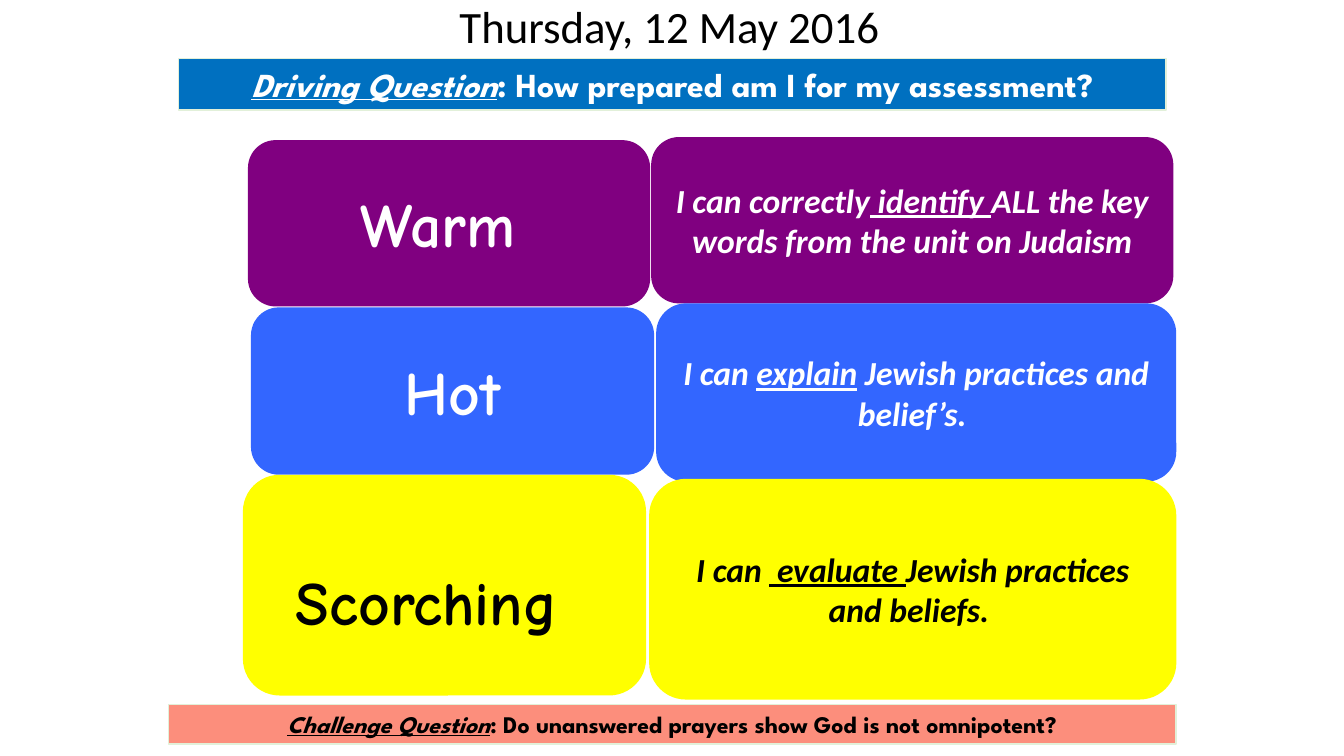
from dataclasses import dataclass

from pptx import Presentation
from pptx.dml.color import RGBColor
from pptx.enum.shapes import MSO_SHAPE as Preset
from pptx.enum.text import MSO_ANCHOR as Anchor, PP_ALIGN as Align
from pptx.shapes.autoshape import Shape
from pptx.slide import Slide
from pptx.text.text import TextFrame
from pptx.util import Pt


@dataclass(frozen=True)
class Theme:
    white: str = "FFFFFF"
    black: str = "000000"
    purple: str = "800080"
    blue: str = "3366FF"
    yellow: str = "FFFF00"
    driving: str = "0070C0"
    challenge: str = "FC8E7C"
    banner_edge: str = "E2F0D9"
    body_font: str = "Calibri"
    level_font: str = "Comic Neue"
    banner_font: str = "League Spartan"
    date_size: float = 32
    level_size: float = 44
    spacer_size: float = 72
    goal_size: float = 24
    driving_size: float = 24
    challenge_size: float = 17


THEME = Theme()


@dataclass(frozen=True)
class Box:
    left: float
    top: float
    width: float
    height: float

    def lengths(self) -> tuple[Pt, Pt, Pt, Pt]:
        return Pt(self.left), Pt(self.top), Pt(self.width), Pt(self.height)


@dataclass(frozen=True)
class Phrase:
    text: str
    font: str
    size: float
    color: str
    bold: bool = True
    italic: bool = False
    underline: bool = False


@dataclass(frozen=True)
class Level:
    name: str
    name_box: Box
    goal: tuple[str, str, str]
    goal_box: Box
    fill: str
    ink: str
    spacer: str = ""


@dataclass(frozen=True)
class Banner:
    label: str
    question: str
    box: Box
    fill: str
    ink: str
    size: float


LEVELS = (
    Level("Warm ", Box(177.1, 100.1, 287.3, 118.8),
          ("I can correctly", " identify ", "ALL the key words from the unit on Judaism"),
          Box(465.1, 97.9, 373, 118.8), THEME.purple, THEME.white),
    Level("Hot", Box(179.3, 219.6, 288, 119.5),
          ("I can ", "explain", " Jewish practices and belief’s. "),
          Box(468.7, 216.7, 371.5, 127.4), THEME.blue, THEME.white),
    Level("Scorching", Box(173.5, 339.1, 288, 157.7),
          ("I can ", " evaluate ", "Jewish practices and beliefs. "),
          Box(463.7, 342, 376.6, 157.7), THEME.yellow, THEME.black, spacer=" "),
)

BANNERS = (
    Banner("Challenge Question", ": Do unanswered prayers show God is not omnipotent?",
           Box(120.2, 503.3, 720, 28.1), THEME.challenge, THEME.black, THEME.challenge_size),
    Banner("Driving Question", ": How prepared am I for my assessment?",
           Box(127.4, 41.8, 705.6, 36.7), THEME.driving, THEME.white, THEME.driving_size),
)


def write(frame: TextFrame, phrases: list[Phrase], align: Align, anchor: Anchor) -> None:
    frame.word_wrap = True
    frame.vertical_anchor = anchor
    paragraph = frame.paragraphs[0]
    paragraph.alignment = align
    for phrase in phrases:
        run = paragraph.add_run()
        run.text = phrase.text
        font = run.font
        font.name, font.size = phrase.font, Pt(phrase.size)
        font.bold, font.italic, font.underline = phrase.bold, phrase.italic, phrase.underline
        font.color.rgb = RGBColor.from_string(phrase.color)


def add_panel(slide: Slide, preset: Preset, box: Box, fill: str) -> Shape:
    """Add a flat, filled shape without an outline."""
    panel = slide.shapes.add_shape(preset, *box.lengths())
    panel.shadow.inherit = False
    panel.fill.solid()
    panel.fill.fore_color.rgb = RGBColor.from_string(fill)
    panel.line.fill.background()
    return panel


def add_goal(slide: Slide, level: Level) -> None:
    panel = add_panel(slide, Preset.ROUNDED_RECTANGLE, level.goal_box, level.fill)
    before, verb, after = level.goal
    phrases = [Phrase(text, THEME.body_font, THEME.goal_size, level.ink,
                      italic=True, underline=text == verb)
               for text in (before, verb, after)]
    write(panel.text_frame, phrases, Align.CENTER, Anchor.MIDDLE)


def add_level_name(slide: Slide, level: Level) -> None:
    panel = add_panel(slide, Preset.ROUNDED_RECTANGLE, level.name_box, level.fill)
    phrases = [Phrase(level.name, THEME.level_font, THEME.level_size, level.ink)]
    if level.spacer:
        phrases.append(Phrase(level.spacer, THEME.level_font, THEME.spacer_size, level.ink))
    write(panel.text_frame, phrases, Align.CENTER, Anchor.MIDDLE)


def add_banner(slide: Slide, banner: Banner) -> None:
    panel = add_panel(slide, Preset.RECTANGLE, banner.box, banner.fill)
    panel.line.color.rgb = RGBColor.from_string(THEME.banner_edge)
    panel.line.width = Pt(1)
    phrases = [
        Phrase(banner.label, THEME.banner_font, banner.size, banner.ink,
               italic=True, underline=True),
        Phrase(banner.question, THEME.banner_font, banner.size, banner.ink),
    ]
    write(panel.text_frame, phrases, Align.CENTER, Anchor.TOP)


def add_date(slide: Slide) -> None:
    date = slide.shapes.add_textbox(*Box(321.1, 3.6, 572.4, 28.8).lengths())
    phrase = Phrase("Thursday, 12 May 2016", THEME.body_font, THEME.date_size,
                    THEME.black, bold=False)
    write(date.text_frame, [phrase], Align.LEFT, Anchor.MIDDLE)


def main() -> None:
    deck = Presentation()
    deck.slide_width, deck.slide_height = Pt(960), Pt(540)
    slide = deck.slides.add_slide(deck.slide_layouts[6])
    for level in LEVELS:
        add_goal(slide, level)
    for level in LEVELS:
        add_level_name(slide, level)
    for banner in BANNERS:
        add_banner(slide, banner)
    add_date(slide)
    deck.save("out.pptx")


if __name__ == "__main__":
    main()
